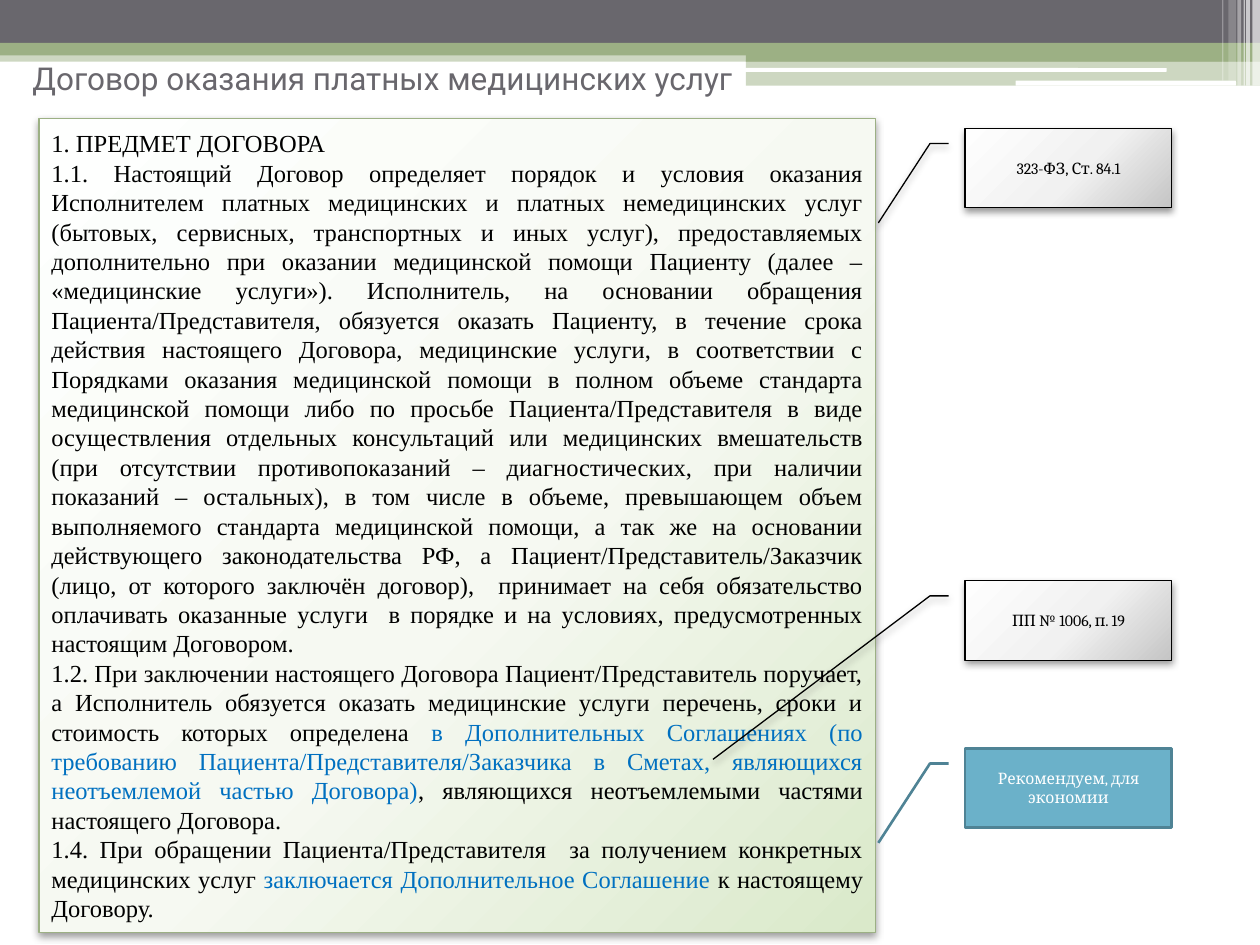
from lxml import etree
from pptx import Presentation
from pptx.dml.color import RGBColor
from pptx.enum.shapes import MSO_SHAPE
from pptx.enum.text import MSO_ANCHOR, PP_ALIGN
from pptx.oxml import parse_xml
from pptx.oxml.ns import nsdecls, qn
from pptx.util import Inches, Pt

RECT, ROUNDED = MSO_SHAPE.RECTANGLE, MSO_SHAPE.ROUNDED_RECTANGLE
CALLOUT = MSO_SHAPE.LINE_CALLOUT_2
MIDDLE = MSO_ANCHOR.MIDDLE
CENTER, JUSTIFY = PP_ALIGN.CENTER, PP_ALIGN.JUSTIFY

WHITE = RGBColor(0xFF, 0xFF, 0xFF)
BLACK = RGBColor(0, 0, 0)
GRAY = RGBColor(0x69, 0x67, 0x6D)
GREEN = RGBColor(0x9C, 0xB0, 0x84)
BLUE = RGBColor(0x00, 0x70, 0xC0)
TEAL = RGBColor(0x6B, 0xB1, 0xC9)
DARK_TEAL = RGBColor(0x4F, 0x83, 0x95)
PALE_GREENS = ("FEFFFE", "F6F9F2", "DAE9CA")
SILVERS = ("FEFEFE", "F1F1F1", "C5C5C5")


def add_block(kind, left, top, width, height, color, alpha=100):
    """Add a borderless filled shape; lengths are in inches."""
    block = page.shapes.add_shape(kind, Inches(left), Inches(top), Inches(width), Inches(height))
    block.shadow.inherit = False
    block.line.fill.background()
    block.fill.solid()
    block.fill.fore_color.rgb = color
    if alpha < 100:
        color_node = block._element.spPr.find(qn("a:solidFill"))[0]
        etree.SubElement(color_node, qn("a:alpha"), val=str(alpha * 1000))
    return block


def add_glow(block, colors):
    """Replace the fill by a round gradient and add a soft drop shadow."""
    stops = "".join(
        f'<a:gs pos="{share * 1000}"><a:srgbClr val="{color}"/></a:gs>'
        for share, color in zip((0, 55, 100), colors))
    properties = block._element.spPr
    solid = properties.find(qn("a:solidFill"))
    properties.replace(solid, parse_xml(
        f'<a:gradFill {nsdecls("a")} rotWithShape="1"><a:gsLst>{stops}</a:gsLst>'
        '<a:path path="circle"><a:fillToRect l="-40000" t="-90000" r="140000" b="190000"/>'
        '</a:path></a:gradFill>'))
    properties.find(qn("a:effectLst")).append(parse_xml(
        f'<a:outerShdw {nsdecls("a")} blurRad="{Pt(4.1)}" dist="{Pt(2)}" dir="5400000" '
        'rotWithShape="0"><a:srgbClr val="000000"><a:alpha val="40000"/></a:srgbClr>'
        '</a:outerShdw>'))


deck = Presentation()
deck.slide_width, deck.slide_height = Inches(10), Inches(7.5)
page = deck.slides.add_slide(deck.slide_layouts[6])

# Header bands
for left, top, width, height, color, alpha in (
    (0, 0.4, 10, 0.09, GREEN, 50),
    (0, 0, 10, 0.34, GRAY, 100),
    (0, 0.34, 10, 0.1, GREEN, 100),
    (5.92, 0.39, 4.08, 0.1, GREEN, 100),
    (5.92, 0.48, 4.08, 0.2, GREEN, 50),
):
    add_block(RECT, left, top, width, height, color, alpha)

# White strips across the bands
for left, top, width, height in ((5.91, 0.54, 3.35, 0.03), (8.06, 0.64, 1.75, 0.04)):
    add_block(ROUNDED, left, top, width, height, WHITE)

# Translucent stripes at the right edge
for left, width, height, alpha in (
    (9.94, 0.06, 0.68, 65), (9.89, 0.03, 0.68, 65), (9.87, 0.01, 0.68, 60),
    (9.82, 0.03, 0.68, 40), (9.75, 0.06, 0.64, 20), (9.7, 0.01, 0.64, 30),
):
    add_block(RECT, left, 0, width, height, WHITE, alpha)

# Title
title = page.shapes.add_textbox(Inches(0.16), Inches(0.3), Inches(9.34), Inches(0.64))
title.text_frame.word_wrap = True
title.text_frame.vertical_anchor = MIDDLE
title.text_frame.text = "Договор оказания платных медицинских услуг"
font = title.text_frame.paragraphs[0].runs[0].font
font.name, font.size, font.color.rgb = "Roboto", Pt(18), GRAY

# Contract text: each paragraph is a list of spans with their colours
contract = (
    [("1. ПРЕДМЕТ ДОГОВОРА", BLACK)],
    [("1.1. Настоящий Договор определяет порядок и условия оказания Исполнителем платных "
      "медицинских и платных немедицинских услуг (бытовых, сервисных, транспортных и иных "
      "услуг), предоставляемых дополнительно при оказании медицинской помощи Пациенту (далее – "
      "«медицинские услуги»). ", BLACK),
     ("Исполнитель, на основании обращения Пациента/Представителя, "
      "обязуется оказать Пациенту, в течение срока действия настоящего Договора, медицинские "
      "услуги, в соответствии с Порядками оказания медицинской помощи в полном объеме стандарта "
      "медицинской помощи либо по просьбе Пациента/Представителя в виде осуществления отдельных "
      "консультаций или медицинских вмешательств (при отсутствии противопоказаний – "
      "диагностических, при наличии показаний – остальных), ", BLACK),
     ("в том числе в объеме, превышающем "
      "объем выполняемого стандарта медицинской помощи, а так же на основании действующего "
      "законодательства РФ, а Пациент/Представитель/Заказчик (лицо, от которого заключён "
      "договор),  принимает на себя обязательство оплачивать оказанные услуги  в порядке и на "
      "условиях, предусмотренных настоящим Договором.", BLACK)],
    [("1.2. При заключении настоящего Договора Пациент/Представитель поручает, а Исполнитель "
      "обязуется оказать медицинские услуги перечень, сроки и стоимость которых определена ",
      BLACK),
     ("в Дополнительных Соглашениях (по требованию Пациента/Представителя/Заказчика в Сметах, "
      "являющихся неотъемлемой частью Договора)", BLUE),
     (", являющихся неотъемлемыми частями настоящего Договора.", BLACK)],
    [("1.4. При обращении Пациента/Представителя  за получением конкретных медицинских услуг ",
      BLACK),
     ("заключается Дополнительное Соглашение ", BLUE),
     ("к настоящему Договору.", BLACK)],
)
body = add_block(RECT, 0.31, 0.94, 6.64, 6.46, WHITE)
body.line.color.rgb, body.line.width = GREEN, Pt(0.75)
add_glow(body, PALE_GREENS)
frame = body.text_frame
frame.word_wrap = True
frame.vertical_anchor = MIDDLE
for number, spans in enumerate(contract):
    para = frame.add_paragraph() if number else frame.paragraphs[0]
    para.alignment = JUSTIFY
    para.line_spacing = Pt(16.8)
    for words, ink in spans:
        span = para.add_run()
        span.text = words
        span.font.name, span.font.size = "Times New Roman", Pt(14)
        span.font.color.rgb = ink

# Callouts: the leader's last point is given as shares of height and width
for top, words, end, fill, line, weight, ink in (
    (1.02, "323-ФЗ, Ст. 84.1", (1.19, -0.42), None, BLACK, 0.75, BLACK),
    (4.61, "ПП № 1006, п. 19", (2.25, -1.22), None, BLACK, 0.75, BLACK),
    (5.94, "Рекомендуем, для экономии", (1.19, -0.42), TEAL, DARK_TEAL, 1.5, WHITE),
):
    callout = add_block(CALLOUT, 7.66, top, 1.64, 0.63, fill or WHITE)
    for index, share in enumerate((0.19, -0.08, 0.19, -0.17, *end)):
        callout.adjustments[index] = share
    callout.line.color.rgb, callout.line.width = line, Pt(weight)
    if fill is None:
        add_glow(callout, SILVERS)
    frame = callout.text_frame
    frame.word_wrap = True
    frame.vertical_anchor = MIDDLE
    frame.text = words
    para = frame.paragraphs[0]
    para.alignment = CENTER
    font = para.runs[0].font
    font.name, font.size, font.color.rgb = "Cambria", Pt(9), ink

deck.save("out.pptx")
